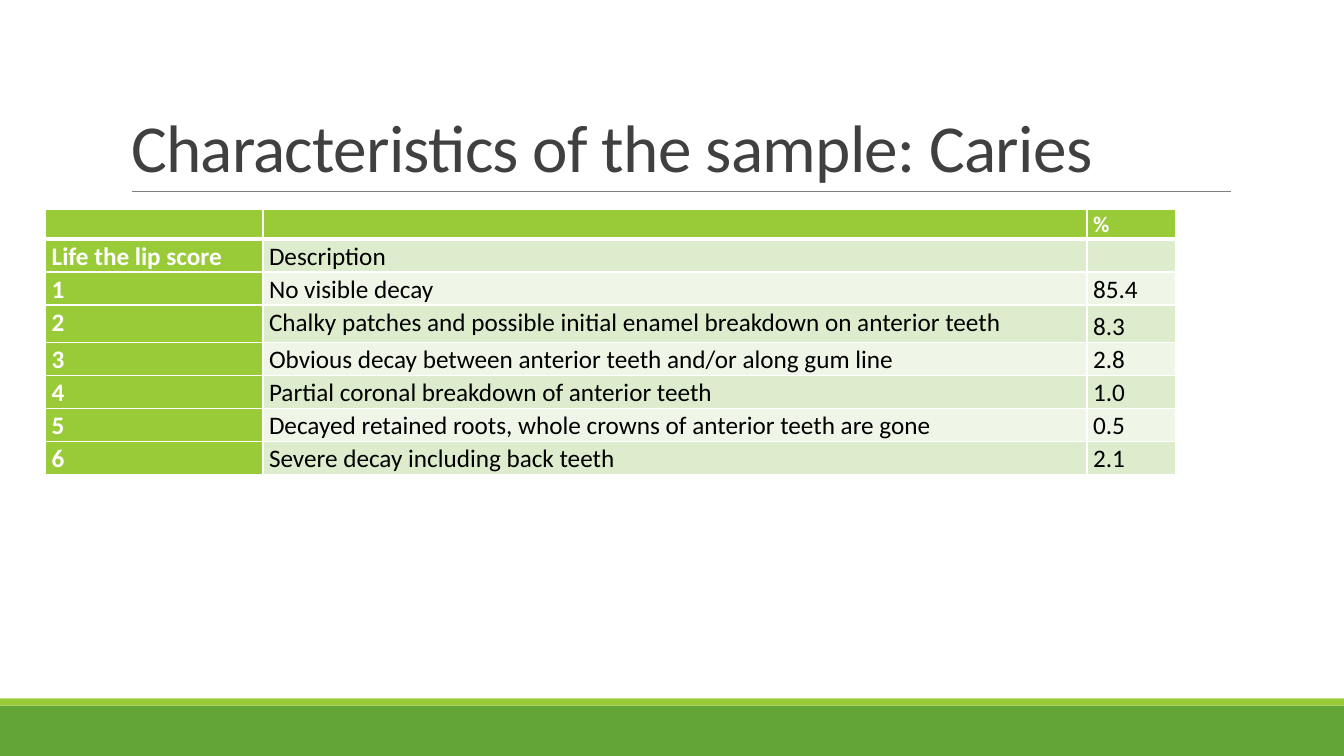
from lxml.etree import SubElement
from pptx import Presentation
from pptx.dml.color import RGBColor
from pptx.enum.shapes import MSO_CONNECTOR, MSO_SHAPE
from pptx.enum.text import MSO_ANCHOR, MSO_AUTO_SIZE, PP_ALIGN
from pptx.oxml.ns import qn
from pptx.util import Pt

WHITE = RGBColor(0xFF, 0xFF, 0xFF)
BLACK = RGBColor(0, 0, 0)
GREY = RGBColor(0x80, 0x80, 0x80)
TITLE_GREY = RGBColor(0x40, 0x40, 0x40)
LIME = RGBColor(0x99, 0xCB, 0x38)
GREEN = RGBColor(0x63, 0xA5, 0x37)
BANDS = [RGBColor(0xEF, 0xF6, 0xE8), RGBColor(0xDE, 0xEC, 0xCE)]
FONT = "Calibri"

ROWS = [
    ("", "", "%"),
    ("Life the lip score", "Description", ""),
    ("1", "No visible decay", "85.4"),
    ("2", "Chalky patches and possible initial enamel breakdown on anterior teeth", "8.3"),
    ("3", "Obvious decay between anterior teeth and/or along gum line", "2.8"),
    ("4", "Partial coronal breakdown of anterior teeth", "1.0"),
    ("5", "Decayed retained roots, whole crowns of anterior teeth are gone", "0.5"),
    ("6", "Severe decay including back teeth", "2.1"),
]
COL_WIDTHS = [155.3, 588.6, 63.2]
ROW_HEIGHTS = [18, 20, 20, 27, 20, 20, 20, 20]


def add_band(s, top, height, color):
    sp = s.shapes.add_shape(MSO_SHAPE.RECTANGLE, 0, Pt(top), Pt(960), Pt(height))
    sp.shadow.inherit = False
    sp.fill.solid()
    sp.fill.fore_color.rgb = color
    sp.line.fill.background()


def add_title_rule(s):
    line = s.shapes.add_connector(MSO_CONNECTOR.STRAIGHT, Pt(94.3), Pt(136.8), Pt(879.1), Pt(136.8))
    line.line.color.rgb = GREY
    line.line.width = Pt(0.5)
    SubElement(line._element.spPr, qn("a:effectLst"))


def add_run(p, text, size, color, bold=False):
    r = p.add_run()
    r.text = text
    r.font.name = FONT
    r.font.size = Pt(size)
    r.font.bold = bold
    r.font.color.rgb = color
    return r


def set_title(s, text):
    title = s.shapes.title
    title.left, title.top, title.width, title.height = Pt(86.4), Pt(22.3), Pt(792), Pt(114.5)
    tf = title.text_frame
    tf.word_wrap = True
    tf.auto_size = MSO_AUTO_SIZE.NONE
    tf.vertical_anchor = MSO_ANCHOR.BOTTOM
    p = tf.paragraphs[0]
    p.alignment = PP_ALIGN.LEFT
    p.line_spacing = 0.85
    r = add_run(p, text, 48, TITLE_GREY)
    r.font._element.set("spc", "-50")


def set_borders(cell, top, bottom):
    tcPr = cell._tc.get_or_add_tcPr()
    for side, width in (("L", 1), ("R", 1), ("T", top), ("B", bottom)):
        ln = SubElement(tcPr, qn(f"a:ln{side}"), w=str(Pt(width)))
        fill = SubElement(ln, qn("a:solidFill"))
        SubElement(fill, qn("a:srgbClr"), val=str(WHITE))


def fill_cell(cell, text, row, col):
    accent = row == 0 or col == 0
    set_borders(cell, 3 if row == 1 else 1, 3 if row == 0 else 1)
    cell.fill.solid()
    cell.fill.fore_color.rgb = LIME if accent else BANDS[row % 2]
    cell.margin_left = cell.margin_right = Pt(4.3)
    cell.margin_top = cell.margin_bottom = 0
    if col == 2 and row > 1:
        cell.vertical_anchor = MSO_ANCHOR.BOTTOM
    p = cell.text_frame.paragraphs[0]
    p.line_spacing = 1.07
    size = 16 if row == 0 else 18
    if text:
        add_run(p, text, size, WHITE if accent else BLACK, accent)
    else:
        SubElement(p._p, qn("a:endParaRPr"), sz=str(size * 100))


def add_score_table(s):
    frame = s.shapes.add_table(len(ROWS), len(COL_WIDTHS), Pt(32.6), Pt(149.8),
                               Pt(sum(COL_WIDTHS)), Pt(sum(ROW_HEIGHTS)))
    table = frame.table
    for column, width in zip(table.columns, COL_WIDTHS):
        column.width = Pt(width)
    for i, (height, texts) in enumerate(zip(ROW_HEIGHTS, ROWS)):
        table.rows[i].height = Pt(height)
        for j, text in enumerate(texts):
            fill_cell(table.cell(i, j), text, i, j)


def main():
    prs = Presentation()
    prs.slide_width, prs.slide_height = Pt(960), Pt(540)
    s = prs.slides.add_slide(prs.slide_layouts[5])
    add_band(s, 504, 36, GREEN)
    add_band(s, 498.8, 5.2, LIME)
    add_title_rule(s)
    set_title(s, "Characteristics of the sample: Caries")
    add_score_table(s)
    prs.save("out.pptx")


if __name__ == "__main__":
    main()
